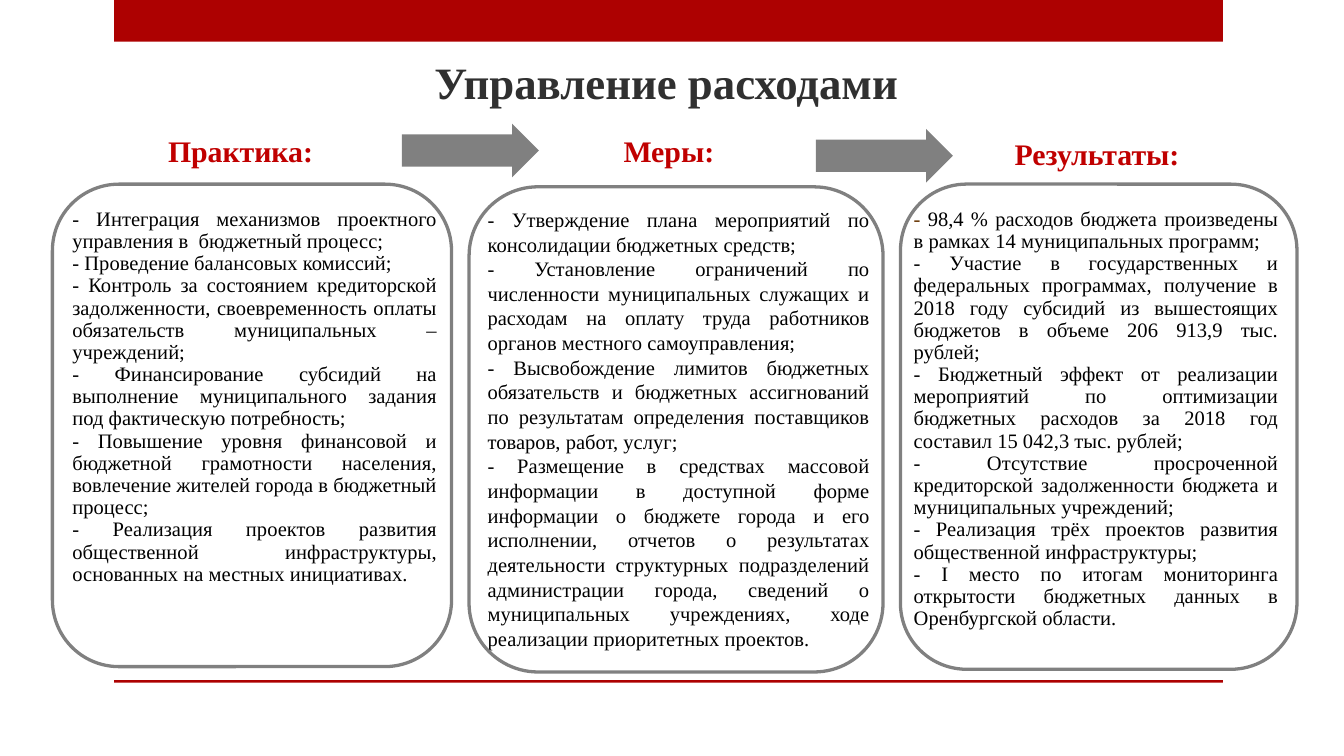
from dataclasses import dataclass

from pptx import Presentation
from pptx.dml.color import RGBColor
from pptx.enum.shapes import MSO_SHAPE as Shape
from pptx.enum.text import MSO_ANCHOR as Anchor, PP_ALIGN as Align
from pptx.util import Inches, Pt


@dataclass(frozen=True)
class Theme:
    font: str = "Times New Roman"
    band: str = "AD0101"
    title: str = "303030"
    heading: str = "C00000"
    text: str = "000000"
    first_dash: str = "663300"
    gray: str = "808080"
    title_size: float = 24
    heading_size: float = 16
    text_size: float = 11
    frame_width: float = 1.75


THEME = Theme()

PRACTICE = [
    "Интеграция механизмов проектного управления в  бюджетный процесс;",
    "Проведение балансовых комиссий;",
    "Контроль за состоянием кредиторской задолженности, своевременность оплаты "
    "обязательств муниципальных – учреждений;",
    "Финансирование субсидий на выполнение муниципального задания "
    "под фактическую потребность;",
    "Повышение уровня финансовой и бюджетной грамотности населения, "
    "вовлечение жителей города в бюджетный процесс;",
    "Реализация проектов развития общественной инфраструктуры, "
    "основанных на местных инициативах.",
]
MEASURES = [
    "Утверждение плана мероприятий по консолидации бюджетных средств;",
    "Установление ограничений по численности муниципальных служащих и расходам "
    "на оплату труда работников органов местного самоуправления;",
    "Высвобождение лимитов бюджетных обязательств и бюджетных ассигнований "
    "по результатам определения поставщиков товаров, работ, услуг;",
    "Размещение в средствах массовой информации в доступной форме информации "
    "о бюджете города и его исполнении, отчетов о результатах деятельности "
    "структурных подразделений администрации города, сведений о муниципальных "
    "учреждениях, ходе реализации приоритетных проектов.",
]
RESULTS = [
    "98,4 % расходов бюджета произведены в рамках 14 муниципальных программ;",
    "Участие в государственных и федеральных программах, получение в 2018 году "
    "субсидий из вышестоящих бюджетов в объеме 206 913,9 тыс. рублей;",
    "Бюджетный эффект от реализации мероприятий по оптимизации бюджетных "
    "расходов за 2018 год составил 15 042,3 тыс. рублей;",
    "Отсутствие просроченной кредиторской задолженности бюджета "
    "и муниципальных учреждений;",
    "Реализация трёх проектов развития общественной инфраструктуры;",
    "I место по итогам мониторинга открытости бюджетных данных "
    "в Оренбургской области.",
]


def color(value):
    return RGBColor.from_string(value)


def add_solid(page, kind, area, fill):
    shape = page.shapes.add_shape(kind, *map(Inches, area))
    shape.shadow.inherit = False
    shape.fill.solid()
    shape.fill.fore_color.rgb = color(fill)
    shape.line.fill.background()
    return shape


def add_arrow(page, left, top):
    arrow = add_solid(page, Shape.RIGHT_ARROW, (left, top, 1.02, 0.4), THEME.gray)
    arrow.adjustments[0] = 0.6


def add_frame(page, area):
    frame = page.shapes.add_shape(Shape.ROUNDED_RECTANGLE, *map(Inches, area))
    frame.shadow.inherit = False
    frame.fill.background()
    frame.line.color.rgb = color(THEME.gray)
    frame.line.width = Pt(THEME.frame_width)


def add_text_frame(page, area, anchor):
    box = page.shapes.add_textbox(*map(Inches, area))
    frame = box.text_frame
    frame.word_wrap = True
    frame.vertical_anchor = anchor
    return frame


def style(para, size, text_color, bold=False):
    para.font.name = THEME.font
    para.font.size = Pt(size)
    para.font.bold = bold
    para.font.color.rgb = color(text_color)


def add_title(page, text):
    frame = add_text_frame(page, (0.75, 0.21, 8.19, 0.79), Anchor.MIDDLE)
    frame.margin_left = Inches(0.32)
    para = frame.paragraphs[0]
    para.text = text
    para.alignment = Align.CENTER
    style(para, THEME.title_size, THEME.title, bold=True)


def add_heading(page, text, left, top):
    frame = add_text_frame(page, (left, top, 1.61, 0.37), Anchor.TOP)
    frame.margin_left = frame.margin_top = frame.margin_right = Inches(0.11)
    frame.margin_bottom = Inches(0.06)
    para = frame.paragraphs[0]
    para.text = text
    para.line_spacing = 0.9
    style(para, THEME.heading_size, THEME.heading, bold=True)


def add_points(page, points, area, spacing, first_dash=THEME.text):
    """Add justified paragraphs led by dashes; the first dash may differ in colour."""
    frame = add_text_frame(page, area, Anchor.MIDDLE)
    for index, point in enumerate(points):
        para = frame.add_paragraph() if index else frame.paragraphs[0]
        para.alignment = Align.JUSTIFY
        para.line_spacing = spacing
        style(para, THEME.text_size, THEME.text)
        if index == 0 and first_dash != THEME.text:
            dash = para.add_run()
            dash.text = "- "
            dash.font.color.rgb = color(first_dash)
            para.add_run().text = point
        else:
            para.add_run().text = f"- {point}"


def main():
    deck = Presentation()
    deck.slide_width = Inches(10)
    deck.slide_height = deck.slide_width * 9 // 16
    page = deck.slides.add_slide(deck.slide_layouts[6])

    for top, height in ((0, 0.31), (5.06, 0.02)):
        add_solid(page, Shape.RECTANGLE, (0.85, top, 8.25, height), THEME.band)
    add_title(page, "Управление расходами")

    add_heading(page, "Практика:", 1.14, 0.91)
    add_heading(page, "Меры:", 4.53, 0.91)
    add_heading(page, "Результаты:", 7.44, 0.93)

    add_points(page, PRACTICE, (0.44, 1.37, 2.91, 3.17), 0.9)
    add_points(page, MEASURES, (3.53, 1.4, 3.04, 3.58), 1.0)
    add_points(page, RESULTS, (6.7, 2.02, 2.91, 2.2), 0.9, THEME.first_dash)

    add_arrow(page, 2.99, 0.92)
    add_arrow(page, 6.07, 0.96)
    for area in ((0.39, 1.37, 2.97, 3.59), (3.49, 1.39, 3.08, 3.61), (6.7, 1.37, 2.95, 3.61)):
        add_frame(page, area)

    deck.save("out.pptx")


if __name__ == "__main__":
    main()
